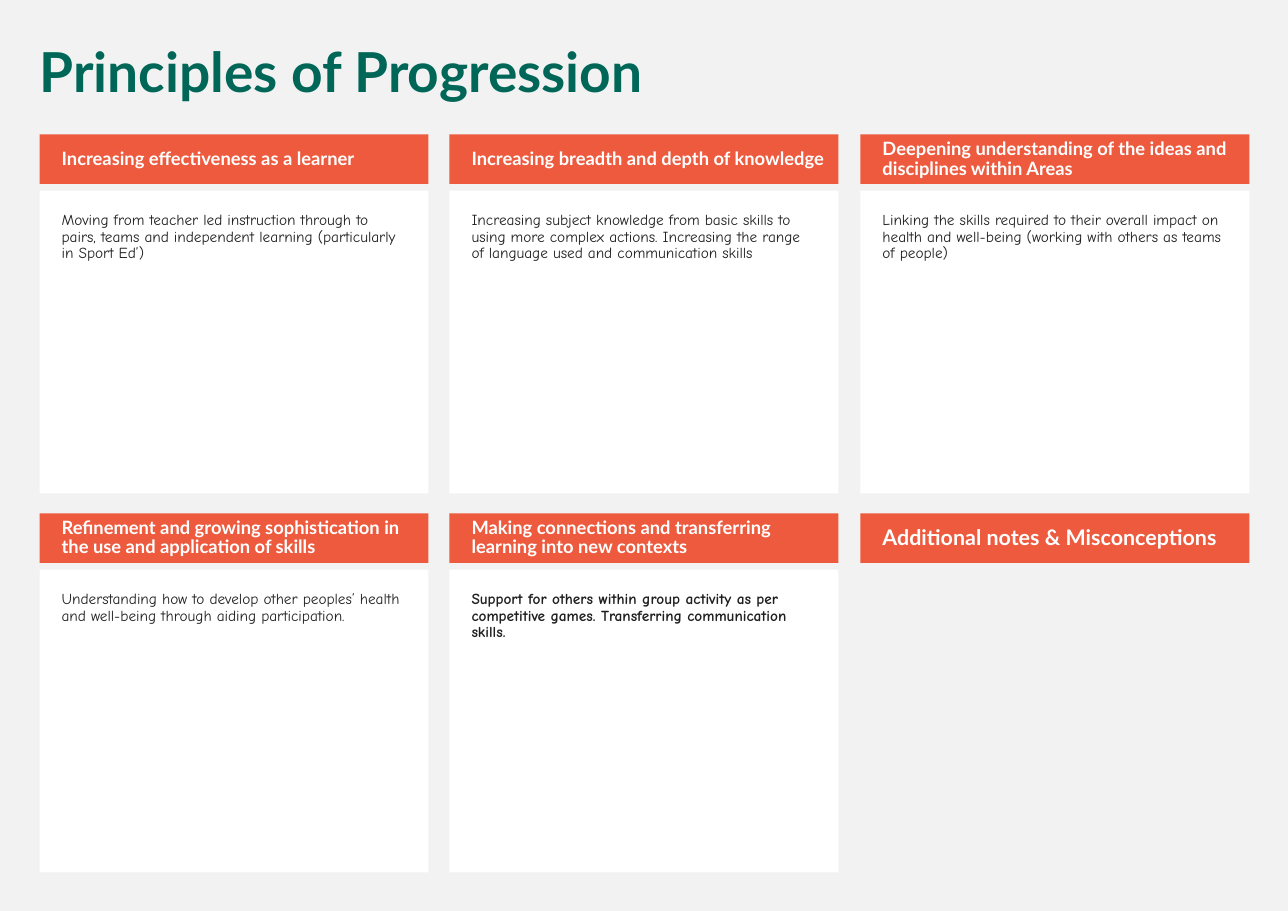
import dataclasses
import typing

import pptx
import pptx.dml.color
import pptx.enum.shapes
import pptx.enum.text
import pptx.util

EMU_PER_PX = 9144
SLIDE_WIDTH, SLIDE_HEIGHT = 1169, 827
GRID_LEFT, GRID_TOP = 36, 122
COLUMNS, ROW_PITCH = 3, 344
GRID_SPAN = 745
CARD_WIDTH, HEADER_HEIGHT, BODY_HEIGHT = 353, 45, 275
BODY_OFFSET = 51


@dataclasses.dataclass(frozen=True)
class Theme:
    background: str = "F2F2F2"
    title: str = "006758"
    header: str = "ED5A3E"
    paper: str = "FFFFFF"
    ink: str = "1F1F1F"
    heading_font: str = "Lato"
    body_font: str = "Comic Neue"
    title_size: int = 36
    header_size: int = 12
    large_header_size: int = 14
    body_size: int = 10
    line_spacing: float = 0.9
    space_before: int = 11


THEME = Theme()


@dataclasses.dataclass(frozen=True)
class TextStyle:
    font: str
    size: int
    color: str
    bold: bool
    insets: tuple[int, int, int, int]
    anchor: pptx.enum.text.MSO_ANCHOR = pptx.enum.text.MSO_ANCHOR.TOP


@dataclasses.dataclass(frozen=True)
class Card:
    heading: str
    body: str = ""
    heading_size: int = THEME.header_size
    bold_body: bool = False


CARDS = (
    Card(
        "Increasing effectiveness as a learner",
        "Moving from teacher led instruction through to pairs, teams and "
        "independent learning (particularly in Sport Ed’)",
    ),
    Card(
        "Increasing breadth and depth of knowledge",
        "Increasing subject knowledge from basic skills to using more complex actions. "
        "Increasing the range of language used and communication skills",
    ),
    Card(
        "Deepening understanding of the ideas and disciplines within Areas",
        "Linking the skills required to their overall impact on health and well-being "
        "(working with others as teams of people)",
    ),
    Card(
        "Refinement and growing sophistication in the use and application of skills",
        "Understanding how to develop other peoples’ health and well-being "
        "through aiding participation.",
    ),
    Card(
        "Making connections and transferring learning into new contexts",
        "Support for others within group activity as per competitive games. "
        "Transferring communication skills.",
        bold_body=True,
    ),
    Card("Additional notes & Misconceptions", heading_size=THEME.large_header_size),
)


def px(length: int) -> pptx.util.Emu:
    return pptx.util.Emu(length * EMU_PER_PX)


def rgb(color: str) -> pptx.dml.color.RGBColor:
    return pptx.dml.color.RGBColor.from_string(color)


def write_text(shape: typing.Any, text: str, style: TextStyle) -> None:
    frame = shape.text_frame
    frame.word_wrap = True
    frame.auto_size = pptx.enum.text.MSO_AUTO_SIZE.NONE
    frame.vertical_anchor = style.anchor
    left, top, right, bottom = map(px, style.insets)
    frame.margin_left, frame.margin_top = left, top
    frame.margin_right, frame.margin_bottom = right, bottom
    paragraph = frame.paragraphs[0]
    paragraph.alignment = pptx.enum.text.PP_ALIGN.LEFT
    paragraph.line_spacing = THEME.line_spacing
    paragraph.space_before = pptx.util.Pt(THEME.space_before)
    run = paragraph.add_run()
    run.text = text
    run.font.name = style.font
    run.font.size = pptx.util.Pt(style.size)
    run.font.bold = style.bold
    run.font.color.rgb = rgb(style.color)


def add_panel(
    slide: typing.Any, left: int, top: int, height: int, fill: str, text: str, style: TextStyle
) -> None:
    shape = slide.shapes.add_shape(
        pptx.enum.shapes.MSO_SHAPE.RECTANGLE, px(left), px(top), px(CARD_WIDTH), px(height)
    )
    shape.shadow.inherit = False
    shape.fill.solid()
    shape.fill.fore_color.rgb = rgb(fill)
    shape.line.fill.background()
    write_text(shape, text, style)


def add_card(slide: typing.Any, card: Card, left: int, top: int) -> None:
    if card.body:
        body_style = TextStyle(
            THEME.body_font, THEME.body_size, THEME.ink, card.bold_body, (20, 20, 20, 20)
        )
        add_panel(
            slide, left, top + BODY_OFFSET, BODY_HEIGHT, THEME.paper, card.body, body_style
        )
    heading_style = TextStyle(
        THEME.heading_font,
        card.heading_size,
        THEME.paper,
        True,
        (20, 5, 10, 5),
        pptx.enum.text.MSO_ANCHOR.MIDDLE,
    )
    add_panel(slide, left, top, HEADER_HEIGHT, THEME.header, card.heading, heading_style)


def add_title(slide: typing.Any, text: str) -> None:
    title = slide.shapes.title
    title.left, title.top, title.width, title.height = map(px, (26, 36, 1108, 65))
    style = TextStyle(THEME.heading_font, THEME.title_size, THEME.title, True, (10, 5, 10, 5))
    write_text(title, text, style)


def main() -> None:
    presentation = pptx.Presentation()
    presentation.slide_width = px(SLIDE_WIDTH)
    presentation.slide_height = px(SLIDE_HEIGHT)
    slide = presentation.slides.add_slide(presentation.slide_layouts.get_by_name("Title Only"))
    slide.background.fill.solid()
    slide.background.fill.fore_color.rgb = rgb(THEME.background)
    add_title(slide, "Principles of Progression")
    for index, card in enumerate(CARDS):
        row, column = divmod(index, COLUMNS)
        left = GRID_LEFT + column * GRID_SPAN // (COLUMNS - 1)
        add_card(slide, card, left, GRID_TOP + row * ROW_PITCH)
    presentation.save("out.pptx")


if __name__ == "__main__":
    main()
